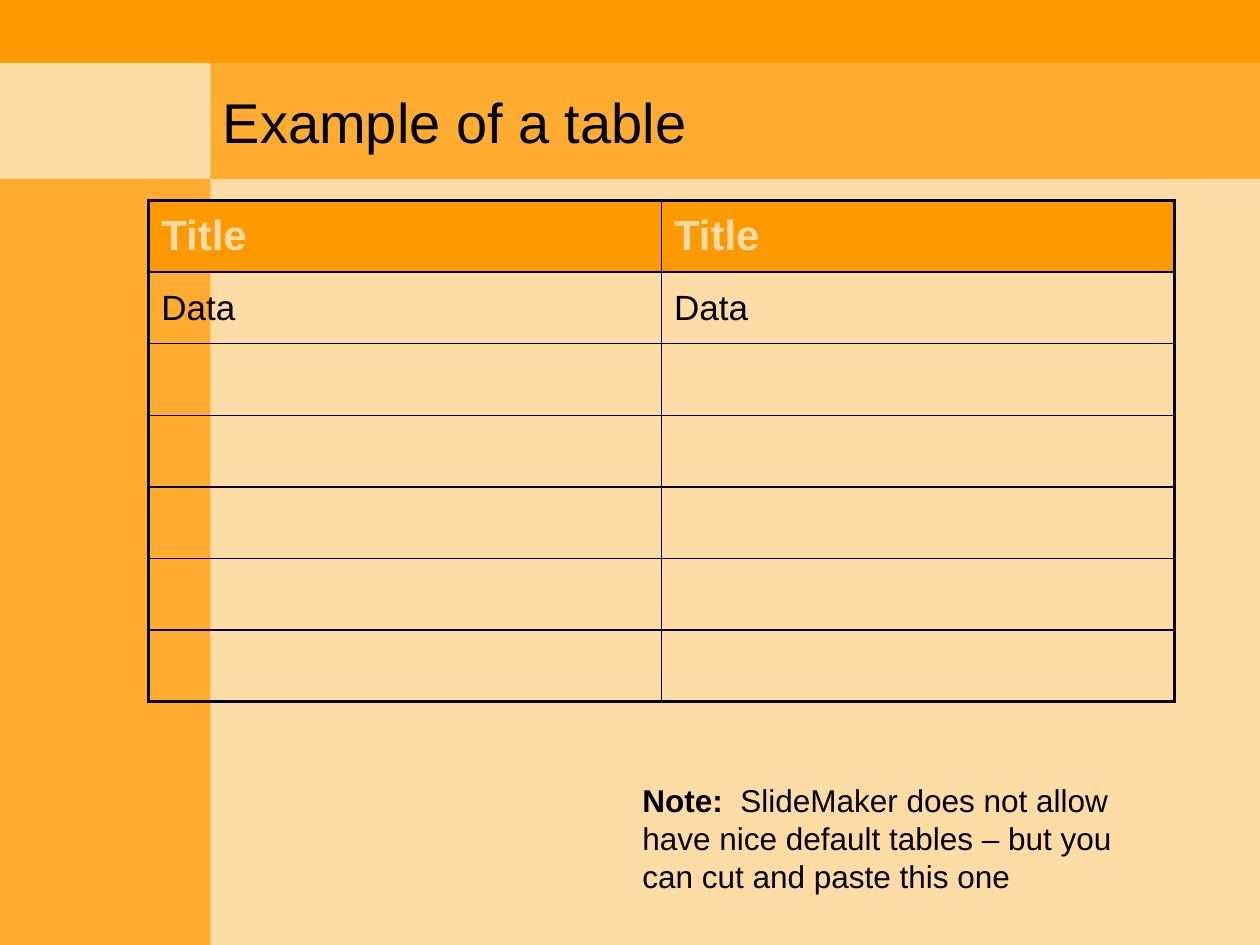
from lxml.etree import SubElement
from pptx import Presentation
from pptx.dml.color import RGBColor
from pptx.enum.shapes import MSO_SHAPE
from pptx.enum.text import MSO_ANCHOR, PP_ALIGN
from pptx.oxml import parse_xml
from pptx.oxml.ns import nsdecls
from pptx.util import Inches, Pt

ORANGE = RGBColor(0xFF, 0x99, 0x00)
AMBER = RGBColor(0xFF, 0xAC, 0x31)
CREAM = RGBColor(0xFF, 0xDB, 0xA6)
BLACK = RGBColor(0, 0, 0)
FACE = "Arial"
ROWS = [("Title", "Title"), ("Data", "Data")] + [("", "")] * 5
THICK, THIN = 2.25, 1


def style(para, size, color=BLACK, bold=False):
    font = para.font
    font.name, font.size, font.bold = FACE, Pt(size), bold
    font.color.rgb = color


def add_band(slide, box, color):
    band = slide.shapes.add_shape(MSO_SHAPE.RECTANGLE, *map(Inches, box))
    band.shadow.inherit = False
    band.fill.solid()
    band.fill.fore_color.rgb = color
    band.line.fill.background()
    return band


def add_title(slide, box, text):
    frame = add_band(slide, box, AMBER).text_frame
    frame.word_wrap = True
    frame.vertical_anchor = MSO_ANCHOR.MIDDLE
    para = frame.paragraphs[0]
    para.text = text
    para.alignment = PP_ALIGN.LEFT
    style(para, 32)


def set_edges(cell, widths):
    props = cell._tc.get_or_add_tcPr()
    for spot, (side, width) in enumerate(zip("LRTB", widths)):
        line = parse_xml(f'<a:ln{side} {nsdecls("a")} w="{Pt(width)}">'
                         f'<a:solidFill><a:srgbClr val="{BLACK}"/></a:solidFill>'
                         f'</a:ln{side}>')
        props.insert(spot, line)


def add_grid(slide, box, rows):
    left, top, width, height = map(Inches, box)
    count, span = len(rows), len(rows[0])
    table = slide.shapes.add_table(count, span, left, top, width, height).table
    table.horz_banding = False
    table.first_row = False
    for r, row in enumerate(rows):
        for c, text in enumerate(row):
            cell = table.cell(r, c)
            cell.vertical_anchor = MSO_ANCHOR.MIDDLE
            para = cell.text_frame.paragraphs[0]
            para.text = text
            if r == 0:
                cell.fill.solid()
                cell.fill.fore_color.rgb = ORANGE
                style(para, 24, CREAM, True)
            else:
                cell.fill.background()
                style(para, 20)
            outer = (c == 0, c == span - 1, r == 0, r == count - 1)
            set_edges(cell, [THICK if edge else THIN for edge in outer])


def add_note(slide, box, label, text):
    frame = slide.shapes.add_textbox(*map(Inches, box)).text_frame
    frame.word_wrap = True
    para = frame.paragraphs[0]
    style(para, 18)
    head = para.add_run()
    head.text = label
    head.font.bold = True
    para.add_run().text = text


def main():
    deck = Presentation()
    deck.slide_width, deck.slide_height = Inches(10), Inches(7.5)
    slide = deck.slides.add_slide(deck.slide_layouts[6])
    back = slide.background.fill
    back.solid()
    back.fore_color.rgb = CREAM
    add_band(slide, (0, 0, 10, 0.5), ORANGE)
    add_band(slide, (0, 1.42, 1.67, 6.08), AMBER)
    add_title(slide, (1.67, 0.5, 8.33, 0.92), "Example of a table")
    add_grid(slide, (1.18, 1.59, 8.14, 3.98), ROWS)
    add_note(slide, (5, 6.15, 4.21, 1), "Note:  ",
             "SlideMaker does not allow have nice default tables – "
             "but you can cut and paste this one")
    deck.save("out.pptx")


if __name__ == "__main__":
    main()
